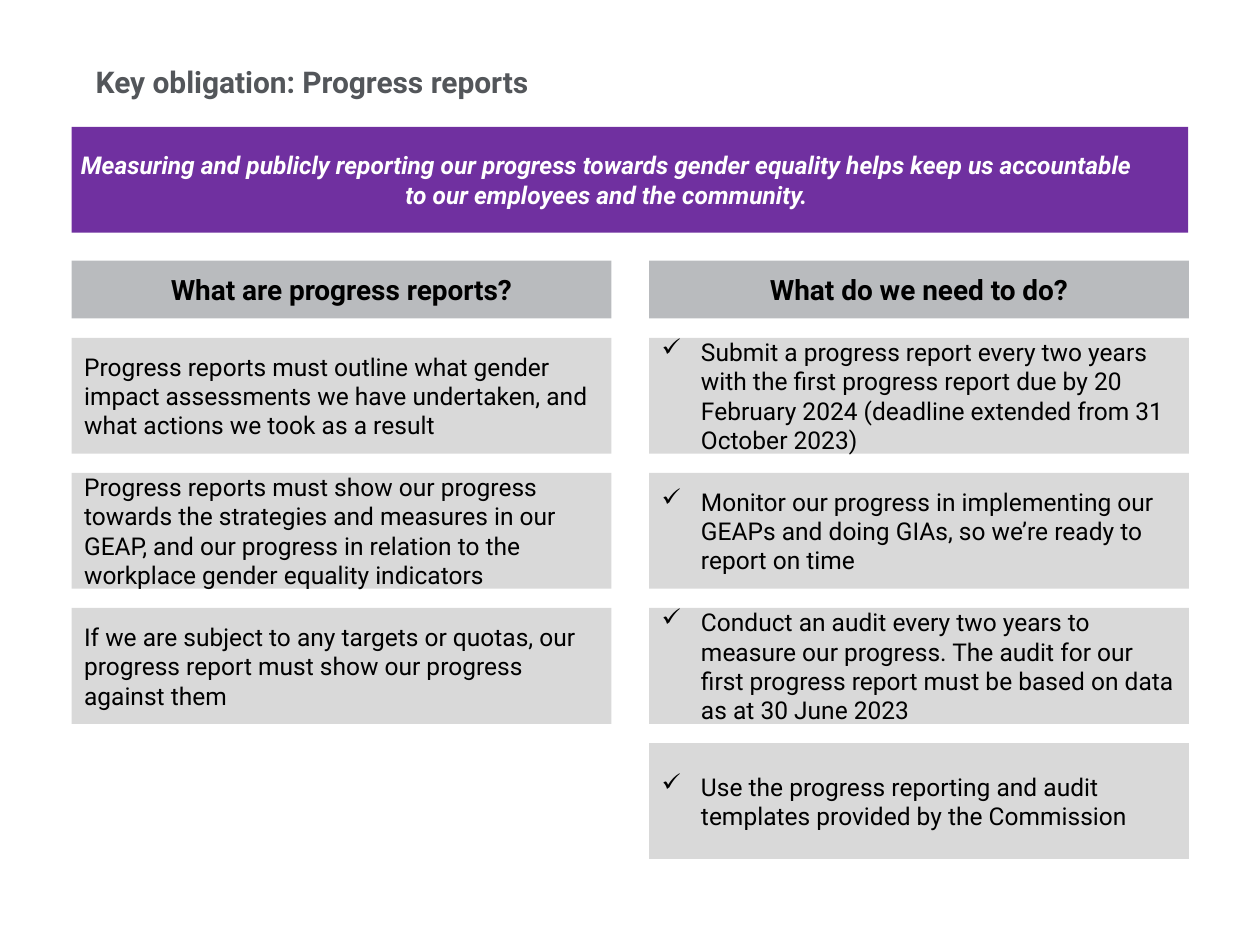
"""Build the slide on progress report obligations."""
from dataclasses import dataclass

from lxml import etree
from pptx import Presentation
from pptx.dml.color import RGBColor
from pptx.enum.shapes import MSO_SHAPE
from pptx.enum.text import MSO_ANCHOR, MSO_AUTO_SIZE, PP_ALIGN
from pptx.oxml.ns import qn
from pptx.util import Pt

RECTANGLE = MSO_SHAPE.RECTANGLE
MIDDLE, BOTTOM = MSO_ANCHOR.MIDDLE, MSO_ANCHOR.BOTTOM
LEFT, CENTER = PP_ALIGN.LEFT, PP_ALIGN.CENTER
NO_AUTOFIT = MSO_AUTO_SIZE.NONE


@dataclass(frozen=True)
class Theme:
    font: str = "Roboto"
    title_color: str = "53565A"
    banner_fill: str = "7030A0"
    banner_color: str = "FFFFFF"
    header_fill: str = "B9BBBE"
    card_fill: str = "D9D9D9"
    text_color: str = "000000"
    title_size: float = 17.1
    header_size: float = 16
    body_size: float = 14


theme = Theme()


def write_text(shape, text, *, size=theme.body_size, color=theme.text_color,
               bold=False, italic=False, align=LEFT, anchor=MIDDLE,
               insets=(7.2, 3.6, 7.2, 3.6), space_after=0, bullet=None):
    frame = shape.text_frame
    frame.word_wrap = True
    frame.auto_size = NO_AUTOFIT
    frame.vertical_anchor = anchor
    (frame.margin_left, frame.margin_top,
     frame.margin_right, frame.margin_bottom) = map(Pt, insets)
    paragraph = frame.paragraphs[0]
    paragraph.alignment = align
    paragraph.space_after = Pt(space_after)
    run = paragraph.add_run()
    run.text = text
    run.font.name = theme.font
    run.font.size = Pt(size)
    run.font.bold = bold
    run.font.italic = italic
    run.font.color.rgb = RGBColor.from_string(color)
    if bullet:
        properties = paragraph._p.get_or_add_pPr()
        properties.set("marL", str(Pt(22.5)))
        properties.set("indent", str(-Pt(22.5)))
        etree.SubElement(properties, qn("a:buChar")).set("char", bullet)


def add_box(left, top, width, height, fill):
    shape = slide.shapes.add_shape(RECTANGLE, Pt(left), Pt(top), Pt(width), Pt(height))
    shape.shadow.inherit = False
    shape.fill.solid()
    shape.fill.fore_color.rgb = RGBColor.from_string(fill)
    shape.line.fill.background()
    return shape


presentation = Presentation()
presentation.slide_width, presentation.slide_height = Pt(720), Pt(540)
slide = presentation.slides.add_slide(presentation.slide_layouts[5])

title = slide.shapes.title
title.left, title.top, title.width, title.height = Pt(54.7), Pt(0), Pt(484.6), Pt(56.9)
write_text(title, "Key obligation: Progress reports", size=theme.title_size,
           color=theme.title_color, bold=True, anchor=BOTTOM, insets=(0, 0, 0, 0))

banner = add_box(41, 72.5, 638, 60.5, theme.banner_fill)
write_text(banner, "Measuring and publicly reporting our progress towards gender equality "
           "helps keep us accountable to our employees and the community.",
           color=theme.banner_color, bold=True, italic=True, align=CENTER,
           insets=(1.4, 3.6, 28.1, 3.6))

columns = [
    (41, "What are progress reports?", None, [
        "Progress reports must outline what gender impact assessments we have "
        "undertaken, and what actions we took as a result",
        "Progress reports must show our progress towards the strategies and measures "
        "in our GEAP, and our progress in relation to the workplace gender equality "
        "indicators",
        "If we are subject to any targets or quotas, our progress report must show "
        "our progress against them",
    ]),
    (371, "What do we need to do?", "✓", [
        "Submit a progress report every two years with the first progress report due "
        "by 20 February 2024 (deadline extended from 31 October 2023)",
        "Monitor our progress in implementing our GEAPs and doing GIAs, so we’re "
        "ready to report on time",
        "Conduct an audit every two years to measure our progress. The audit for our "
        "first progress report must be based on data as at 30 June 2023",
        "Use the progress reporting and audit templates provided by the Commission",
    ]),
]
column_width = 308.4
card_top, card_height, card_pitch = 193, 66.2, 77.2

for left, heading, bullet, cards in columns:
    header = add_box(left, 149, column_width, 33, theme.header_fill)
    write_text(header, heading, size=theme.header_size, bold=True, align=CENTER,
               space_after=6)
    for row, text in enumerate(cards):
        card = add_box(left, card_top + row * card_pitch, column_width, card_height,
                       theme.card_fill)
        write_text(card, text, bullet=bullet)

presentation.save("out.pptx")
